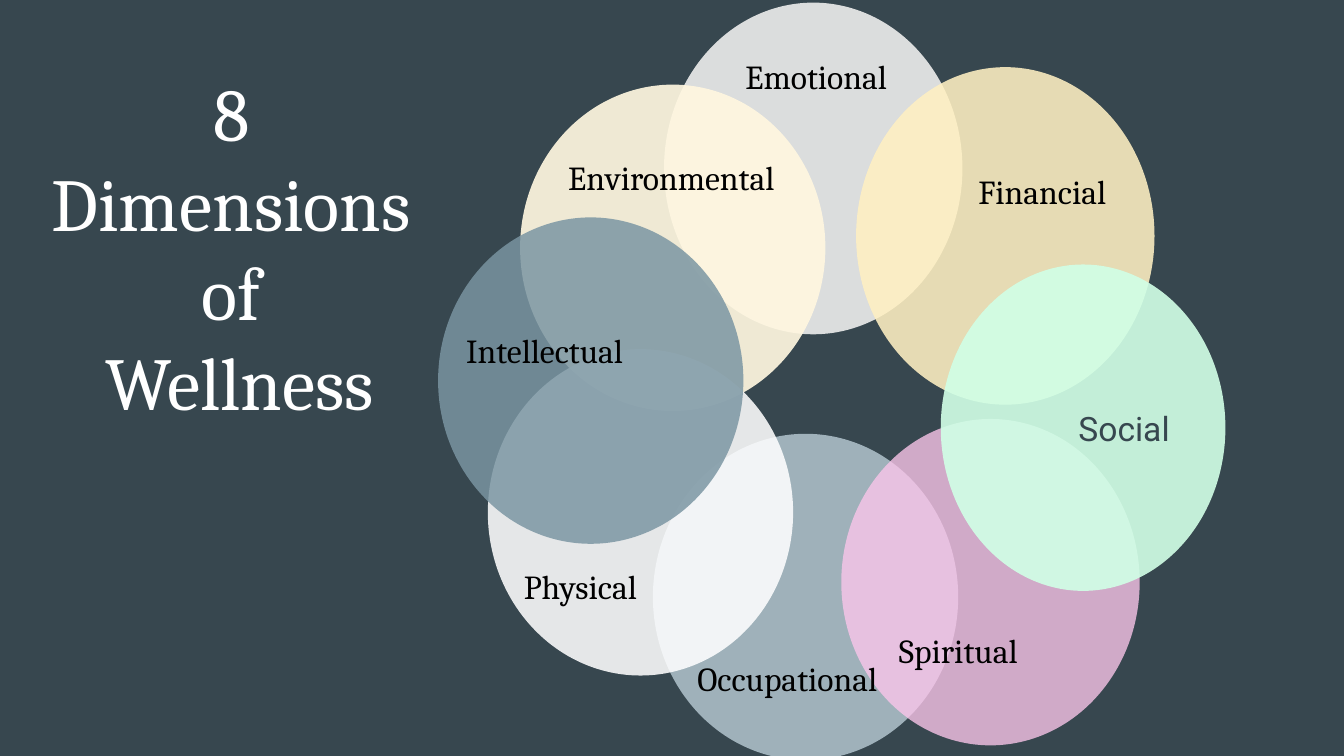
from dataclasses import dataclass

from lxml import etree
from pptx import Presentation
from pptx.dml.color import RGBColor
from pptx.enum.shapes import MSO_SHAPE as Shape
from pptx.enum.text import MSO_ANCHOR as Anchor, MSO_AUTO_SIZE as AutoSize, PP_ALIGN as Align
from pptx.oxml.ns import qn
from pptx.util import Cm, Pt


@dataclass(frozen=True)
class Theme:
    background: str = "37474F"
    title: str = "FFFFFF"
    label: str = "000000"
    environmental: str = "FFF7E0"
    emotional: str = "EAEAEA"
    financial: str = "FFF0C2"
    social: str = "D1FFE6"
    spiritual: str = "FCC6EB"
    occupational: str = "A6B8C1"
    physical: str = "FFFFFF"
    intellectual: str = "7A95A2"
    serif: str = "Cambria"
    sans: str = "Roboto"
    title_size: int = 40
    label_size: int = 18


theme = Theme()


def style(paragraph, font_name, size, color):
    paragraph.font.name = font_name
    paragraph.font.size = Pt(size)
    paragraph.font.color.rgb = RGBColor.from_string(color)


def add_text(left, top, width, height, lines, size, color, align):
    box = slide.shapes.add_textbox(Cm(left), Cm(top), Cm(width), Cm(height))
    frame = box.text_frame
    frame.text = "\n".join(lines)
    frame.word_wrap = False
    frame.auto_size = AutoSize.SHAPE_TO_FIT_TEXT
    for paragraph in frame.paragraphs:
        paragraph.alignment = align
        style(paragraph, theme.serif, size, color)


prs = Presentation()
prs.slide_width, prs.slide_height = Cm(25.4), Cm(14.29)
slide = prs.slides.add_slide(prs.slide_layouts[6])
slide.background.fill.solid()
slide.background.fill.fore_color.rgb = RGBColor.from_string(theme.background)

dimensions = [
    (12.34, 8.2, 5.77, 6.17, theme.occupational, 94),
    (12.55, 0.05, 5.64, 6.27, theme.emotional, 92),
    (9.83, 1.6, 5.77, 6.17, theme.environmental, 92),
    (9.22, 6.6, 5.77, 6.17, theme.physical, 87),
    (8.28, 4.11, 5.77, 6.17, theme.intellectual, 84),
    (16.18, 1.27, 5.64, 6.38, theme.financial, 88),
    (15.9, 7.92, 5.64, 6.17, theme.spiritual, 78),
    (17.78, 5, 5.38, 6.17, theme.social, 91),
]
for left, top, width, height, color, opacity in dimensions:
    petal = slide.shapes.add_shape(Shape.OVAL, Cm(left), Cm(top), Cm(width), Cm(height))
    petal.shadow.inherit = False
    petal.line.fill.background()
    petal.fill.solid()
    petal.fill.fore_color.rgb = RGBColor.from_string(color)
    tint = petal.fill._xPr.find(qn("a:solidFill"))[0]
    etree.SubElement(tint, qn("a:alpha"), val=str(opacity * 1000))

social = petal.text_frame
social.text = "Social"
social.word_wrap = True
social.vertical_anchor = Anchor.MIDDLE
social.margin_left, social.margin_right = Cm(1.55), Cm(0)
social.paragraphs[0].alignment = Align.CENTER
style(social.paragraphs[0], theme.sans, theme.label_size, theme.background)

labels = [
    ("Financial", 18.24, 3.1, 3.07),
    ("Spiritual", 16.74, 11.79, 2.87),
    ("Occupational", 12.93, 12.32, 4.09),
    ("Physical", 9.65, 10.57, 2.77),
    ("Intellectual", 8.56, 6.12, 3.61),
    ("Environmental", 10.49, 2.84, 4.6),
    ("Emotional", 13.84, 0.94, 3.33),
]
for name, left, top, width in labels:
    add_text(left, top, width, 1.02, [name], theme.label_size, theme.label, Align.LEFT)

title_lines = ["8 ", "Dimensions ", "of ", "Wellness"]
add_text(0.51, 1.14, 8.03, 7.09, title_lines, theme.title_size, theme.title, Align.CENTER)

prs.save("out.pptx")
